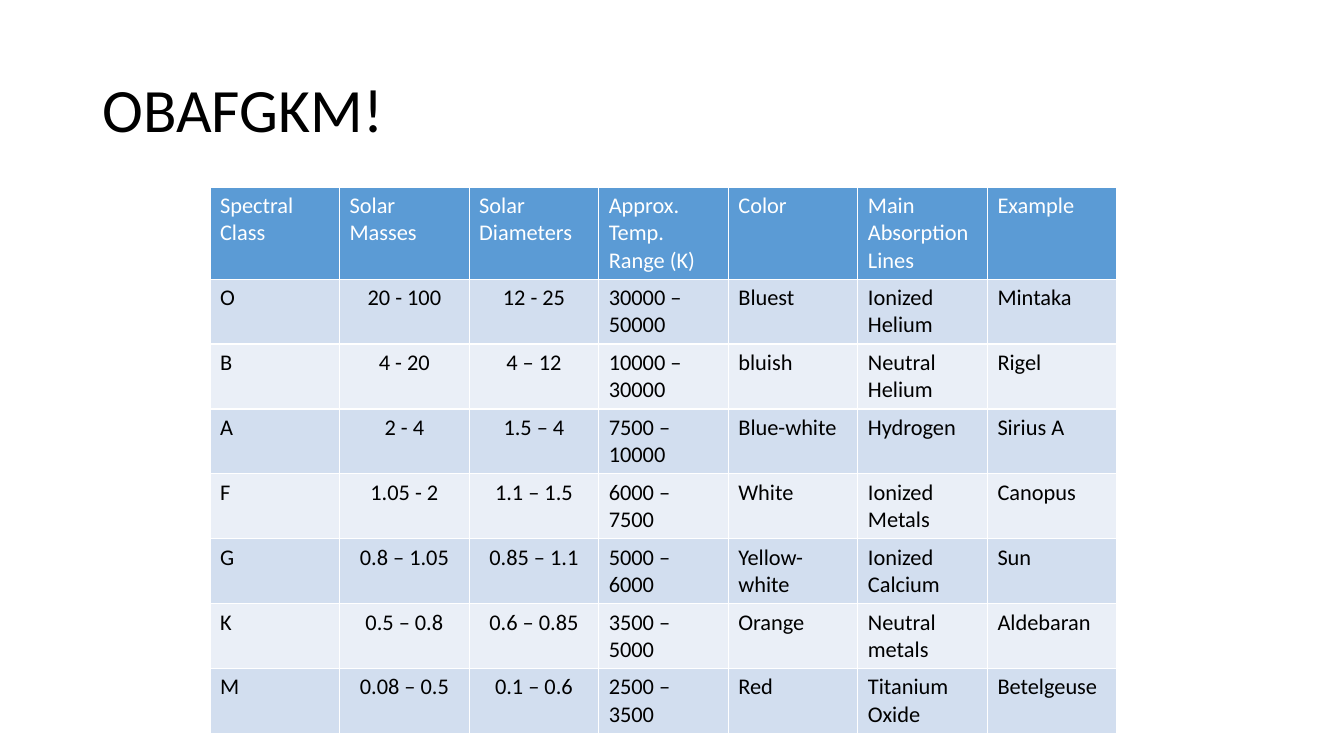
"""Build the OBAFGKM spectral class slide."""
from pptx import Presentation
from pptx import util as u
from pptx.dml import color
from pptx.enum import text

PX = 9525
HEADER, BANDS = "5B9BD5", ("D2DEEF", "EAEFF7")
CENTERED = (1, 2)
ROWS = [
    ("Spectral Class", "Solar Masses", "Solar Diameters", "Approx. Temp. Range (K)",
     "Color", "Main Absorption Lines", "Example"),
    ("O", "20 - 100", "12 - 25", "30000 – 50000", "Bluest", "Ionized Helium", "Mintaka"),
    ("B", "4 - 20", "4 – 12", "10000 – 30000", "bluish", "Neutral Helium", "Rigel"),
    ("A", "2 - 4", "1.5 – 4", "7500 – 10000", "Blue-white", "Hydrogen", "Sirius A"),
    ("F", "1.05 - 2", "1.1 – 1.5", "6000 – 7500", "White", "Ionized Metals", "Canopus"),
    ("G", "0.8 – 1.05", "0.85 – 1.1", "5000 – 6000", "Yellow-white", "Ionized Calcium", "Sun"),
    ("K", "0.5 – 0.8", "0.6 – 0.85", "3500 – 5000", "Orange", "Neutral metals", "Aldebaran"),
    ("M", "0.08 – 0.5", "0.1 – 0.6", "2500 – 3500", "Red", "Titanium Oxide", "Betelgeuse"),
]


def rgb(value):
    return color.RGBColor.from_string(value)


def style(p, size, ink, align):
    p.alignment = align
    for r in p.runs:
        r.font.name = "Calibri"
        r.font.size = u.Pt(size)
        r.font.bold = False
        r.font.color.rgb = rgb(ink)


prs = Presentation()
prs.slide_width, prs.slide_height = 1280 * PX, 720 * PX
slide = prs.slides.add_slide(prs.slide_layouts[5])

title = slide.shapes.title
title.left, title.top, title.width, title.height = (n * PX for n in (88, 38, 1104, 139))
tf = title.text_frame
tf.text = "OBAFGKM!"
tf.word_wrap = True
tf.auto_size = text.MSO_AUTO_SIZE.NONE
tf.vertical_anchor = text.MSO_ANCHOR.MIDDLE
tf.paragraphs[0].line_spacing = 0.9
style(tf.paragraphs[0], 44, "000000", text.PP_ALIGN.LEFT)

frame = slide.shapes.add_table(len(ROWS), len(ROWS[0]), 200 * PX, 178 * PX, 864 * PX, 359 * PX)
table = frame.table
for i, values in enumerate(ROWS):
    table.rows[i].height = (39 if i else 86) * PX
    for j, value in enumerate(values):
        cell = table.cell(i, j)
        cell.text = value
        cell.fill.solid()
        cell.fill.fore_color.rgb = rgb(BANDS[(i - 1) % 2] if i else HEADER)
        align = text.PP_ALIGN.CENTER if i and j in CENTERED else text.PP_ALIGN.LEFT
        style(cell.text_frame.paragraphs[0], 16, "000000" if i else "FFFFFF", align)

prs.save("out.pptx")
